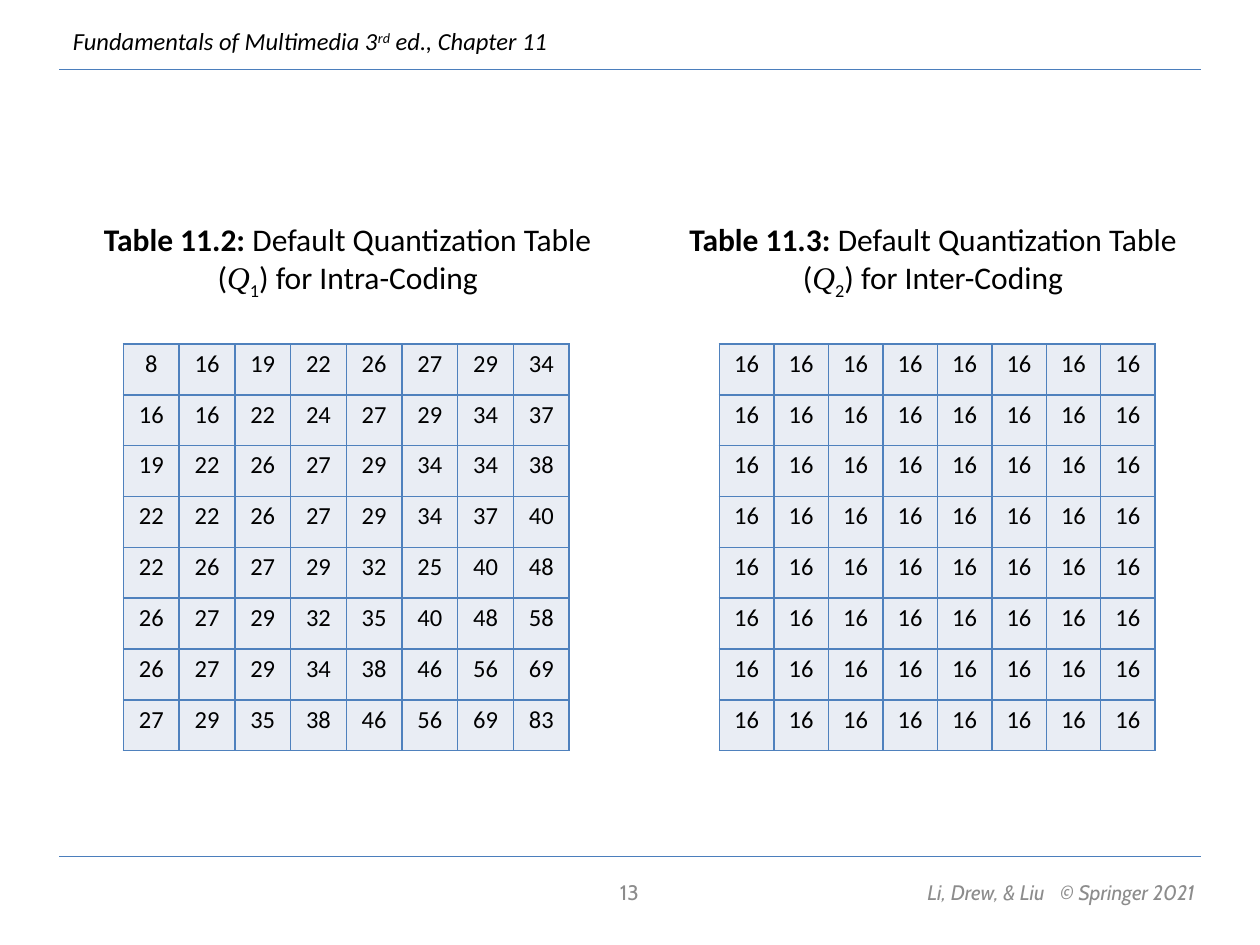
from lxml.etree import SubElement
from pptx import Presentation
from pptx.dml.color import RGBColor
from pptx.enum.shapes import MSO_CONNECTOR
from pptx.enum.text import MSO_ANCHOR, PP_ALIGN
from pptx.oxml.ns import qn
from pptx.util import Inches, Pt

COLORS = {"ink": "000000", "muted": "8C8C8C", "rule": "4B7EBC",
          "border": "4F81BD", "cell": "E9EDF4"}

deck = Presentation()
deck.slide_width, deck.slide_height = Inches(10), Inches(7.5)
slide = deck.slides.add_slide(deck.slide_layouts[6])

# Page grid: 100 columns by 75 rows
COL, ROW = deck.slide_width / 100, deck.slide_height / 75


def place(left, top, width, height):
    return int(left * COL), int(top * ROW), int(width * COL), int(height * ROW)


def add_text(area, lines, size, color, face="Calibri", align=PP_ALIGN.LEFT,
             anchor=MSO_ANCHOR.TOP, wrap=True):
    """Each line is a list of (text, style) runs."""
    frame = slide.shapes.add_textbox(*place(*area)).text_frame
    frame.word_wrap, frame.vertical_anchor = wrap, anchor
    for number, line in enumerate(lines):
        paragraph = frame.add_paragraph() if number else frame.paragraphs[0]
        paragraph.alignment = align
        for text, style in line:
            run = paragraph.add_run()
            run.text = text
            run.font.size = Pt(size)
            run.font.name = style.get("face", face)
            run.font.bold = style.get("bold", False)
            run.font.italic = style.get("italic", False)
            run.font.color.rgb = RGBColor.from_string(COLORS[color])
            for attribute in ("baseline", "spc"):
                if attribute in style:
                    run._r.get_or_add_rPr().set(attribute, style[attribute])


# Header and footer rules
for rule_row in (5.5, 68):
    left, top, width, _ = place(4.7, rule_row, 90.6, 0)
    rule = slide.shapes.add_connector(MSO_CONNECTOR.STRAIGHT, left, top, left + width, top)
    rule.line.color.rgb = RGBColor.from_string(COLORS["rule"])
    rule.line.width = Pt(0.75)
    SubElement(rule._element.spPr, qn("a:effectLst"))

# Header and footer text
italic = {"italic": True}
add_text((4.8, 1.6, 40.2, 3.4),
         [[("Fundamentals of Multimedia 3", italic),
           ("rd", {"italic": True, "baseline": "30000"}),
           (" ed., Chapter 11", italic)]], 14, "ink", wrap=False)
add_text((64.1, 68.8, 31.7, 4),
         [[("Li, Drew, & Liu", italic), (" ", {"italic": True, "spc": "600"}),
           ("© Springer 2021", italic)]],
         12, "muted", "Cabin", PP_ALIGN.RIGHT, MSO_ANCHOR.MIDDLE)
add_text((38.3, 68.8, 23.3, 4), [[("13", {})]],
         12, "muted", "Cabin", PP_ALIGN.CENTER, MSO_ANCHOR.MIDDLE)

# Quantization values
intra_values = [
    [8, 16, 19, 22, 26, 27, 29, 34],
    [16, 16, 22, 24, 27, 29, 34, 37],
    [19, 22, 26, 27, 29, 34, 34, 38],
    [22, 22, 26, 27, 29, 34, 37, 40],
    [22, 26, 27, 29, 32, 25, 40, 48],
    [26, 27, 29, 32, 35, 40, 48, 58],
    [26, 27, 29, 34, 38, 46, 56, 69],
    [27, 29, 35, 38, 46, 56, 69, 83],
]
inter_values = [[16] * 8 for _ in range(8)]

# Caption number, index, coding; caption left and width; table left and width
panels = [
    ("11.2", "1", "Intra", 2.6, 50, 9.8, 35.4, intra_values),
    ("11.3", "2", "Inter", 52.1, 43.9, 57.1, 34.6, inter_values),
]
for number, index, coding, caption_left, caption_width, left, width, values in panels:
    # Caption
    add_text((caption_left, 17, caption_width, 7.1),
             [[(f"Table {number}: ", {"bold": True}), ("Default Quantization Table", {})],
              [("(", {}), ("Q", {"italic": True, "face": "Times New Roman"}),
               (index, {"baseline": "-25000"}), (f") for {coding}-Coding", {})]],
             18, "ink", align=PP_ALIGN.CENTER)

    # Value grid
    grid = slide.shapes.add_table(8, 8, *place(left, 27.3, width, 32.3)).table
    grid.first_row = grid.horz_banding = False
    for row, row_values in enumerate(values):
        for column, value in enumerate(row_values):
            cell = grid.cell(row, column)
            cell.margin_left = cell.margin_right = Inches(0.07)
            cell.margin_top = cell.margin_bottom = Inches(0.04)
            cell.text_frame.text = str(value)
            paragraph = cell.text_frame.paragraphs[0]
            paragraph.alignment = PP_ALIGN.CENTER
            font = paragraph.runs[0].font
            font.size, font.name = Pt(14), "Calibri"
            font.color.rgb = RGBColor.from_string(COLORS["ink"])
            for side in ("lnL", "lnR", "lnT", "lnB"):
                border = SubElement(cell._tc.get_or_add_tcPr(), qn(f"a:{side}"), w=str(Pt(1)))
                stroke = SubElement(border, qn("a:solidFill"))
                SubElement(stroke, qn("a:srgbClr"), val=COLORS["border"])
            cell.fill.solid()
            cell.fill.fore_color.rgb = RGBColor.from_string(COLORS["cell"])

deck.save("out.pptx")
